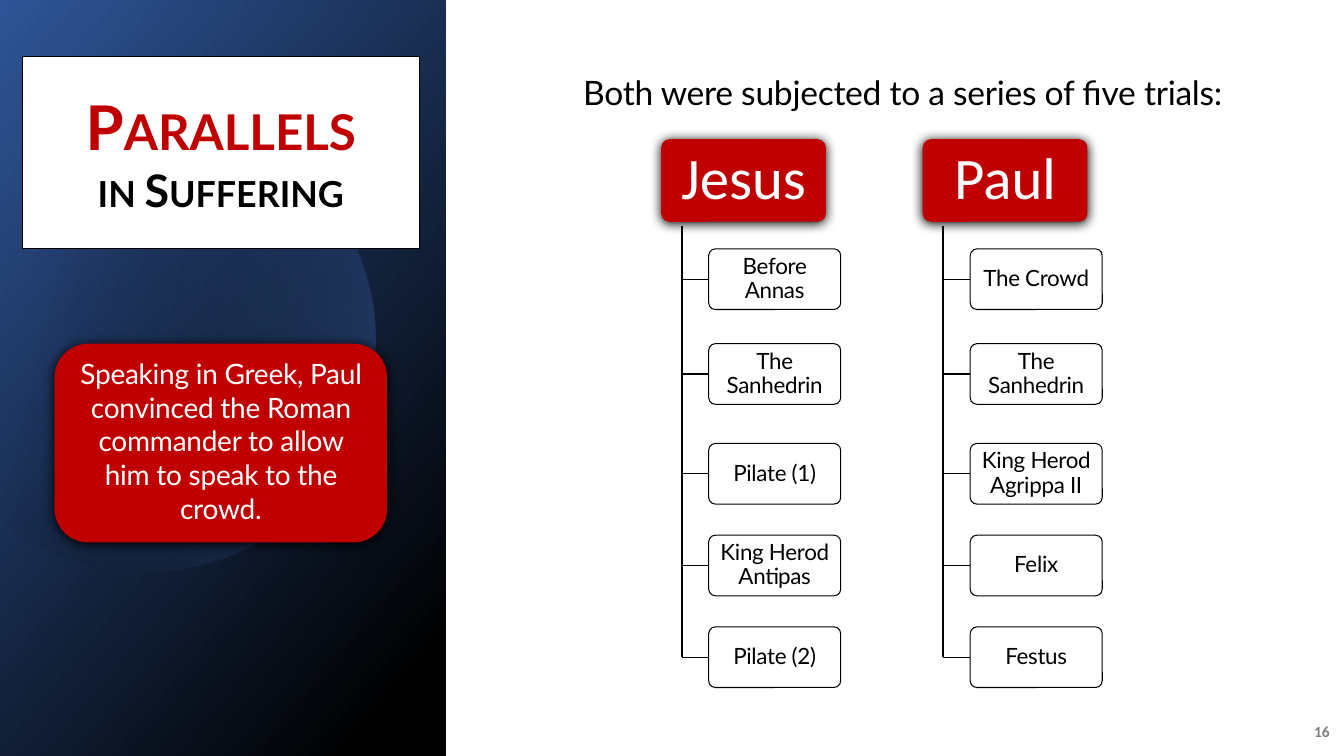
from dataclasses import dataclass
from math import acos, cos, sin, pi
from typing import Optional

from lxml.etree import SubElement
from pptx import Presentation
from pptx.dml.color import RGBColor
from pptx.enum.shapes import MSO_CONNECTOR, MSO_SHAPE
from pptx.enum.text import MSO_ANCHOR, MSO_AUTO_SIZE, PP_ALIGN
from pptx.oxml.ns import qn
from pptx.util import Pt

BLACK = RGBColor(0x00, 0x00, 0x00)
WHITE = RGBColor(0xFF, 0xFF, 0xFF)
RED = RGBColor(0xC0, 0x00, 0x00)
GREY = RGBColor(0x80, 0x80, 0x80)
NAVY = RGBColor(0x2F, 0x55, 0x97)
BLUE = RGBColor(0x44, 0x72, 0xC4)


@dataclass
class Style:
    font: str
    size: float
    color: RGBColor
    bold: bool = False
    align: PP_ALIGN = PP_ALIGN.CENTER
    line_spacing: float = 1.0
    tight: bool = False


@dataclass
class Card:
    fill: RGBColor
    style: Style
    insets: tuple[float, float, float, float]
    corner: float
    outline: Optional[RGBColor] = None
    glow: bool = False


@dataclass
class Column:
    heading: str
    left: float
    trials: list[str]


HEADING = Card(RED, Style("Calibri", 42, WHITE, line_spacing=0.9), (8, 6, 8, 6), 0.1, glow=True)
TRIAL = Card(WHITE, Style("Lato", 16, BLACK, line_spacing=0.9, tight=True),
             (4.5, 3.5, 4.5, 3.5), 0.11, outline=BLACK)
NOTE = Card(RED, Style("Lato", 20, WHITE, tight=True), (7.2, 0, 7.2, 3.6), 0.17, glow=True)

COLUMNS = [
    Column("Jesus", 472.3, ["Before Annas", "The Sanhedrin", "Pilate (1)",
                            "King Herod Antipas", "Pilate (2)"]),
    Column("Paul", 659.1, ["The Crowd", "The Sanhedrin", "King Herod Agrippa II",
                           "Felix", "Festus"]),
]
TRIAL_TOPS = [177.8, 245.5, 316.8, 382.3, 447.8]
TRIAL_WIDTH, TRIAL_HEIGHT = 94.3, 43.3
TRUNK_INDENT, TRIAL_INDENT = 14.6, 33.9


def set_insets(frame, insets: tuple[float, float, float, float]) -> None:
    (frame.margin_left, frame.margin_top,
     frame.margin_right, frame.margin_bottom) = map(Pt, insets)


def write(frame, text: str, style: Style) -> None:
    frame.word_wrap = True
    para = frame.paragraphs[0]
    para.alignment = style.align
    para.line_spacing = style.line_spacing
    span = para.add_run()
    span.text = text
    if style.tight:
        span._r.get_or_add_rPr().set("spc", "-20")
    font = para.font
    font.name, font.size, font.bold = style.font, Pt(style.size), style.bold
    font.color.rgb = style.color


def add_text(page, text: str, style: Style, left: float, top: float,
             width: float, height: float):
    box = page.shapes.add_textbox(Pt(left), Pt(top), Pt(width), Pt(height))
    write(box.text_frame, text, style)
    return box


def add_card(shapes, card: Card, text: str, left: float, top: float,
             width: float, height: float) -> None:
    box = shapes.add_shape(MSO_SHAPE.ROUNDED_RECTANGLE, Pt(left), Pt(top), Pt(width), Pt(height))
    box.adjustments[0] = card.corner
    box.fill.solid()
    box.fill.fore_color.rgb = card.fill
    if card.outline is None:
        box.line.fill.background()
    else:
        box.line.color.rgb = card.outline
        box.line.width = Pt(0.75)
    box.shadow.inherit = False
    if card.glow:
        effects = box._element.spPr.find(qn("a:effectLst"))
        shadow = SubElement(effects, qn("a:outerShdw"), blurRad=str(Pt(8.5)), dist=str(Pt(1)),
                            dir="5400000", algn="ctr", rotWithShape="0")
        SubElement(shadow, qn("a:srgbClr"), val=str(BLACK))
    box.text_frame.vertical_anchor = MSO_ANCHOR.MIDDLE
    set_insets(box.text_frame, card.insets)
    write(box.text_frame, text, card.style)


def add_line(shapes, x1: float, y1: float, x2: float, y2: float, weight: float) -> None:
    line = shapes.add_connector(MSO_CONNECTOR.STRAIGHT, Pt(x1), Pt(y1), Pt(x2), Pt(y2))
    line.line.color.rgb = BLACK
    line.line.width = Pt(weight)
    SubElement(line._element.spPr, qn("a:effectLst"))


def set_gradient(shape, angle: float, stops: list[tuple[float, RGBColor]]) -> None:
    shape.fill.gradient()
    shape.fill.gradient_angle = angle
    for stop, (position, color) in zip(shape.fill.gradient_stops, stops):
        stop.position = position
        stop.color.rgb = color
    shape.line.fill.background()
    shape.shadow.inherit = False


def add_side_panel(page) -> None:
    panel = page.shapes.add_shape(MSO_SHAPE.RECTANGLE, 0, 0, Pt(318.5), Pt(540))
    set_gradient(panel, 140, [(0.08, BLACK), (1, NAVY)])

    center_x, center_y, radius, steps = 104, 244, 164, 90
    reach = acos(-center_x / radius)
    angles = [reach * (2 * step / steps - 1) for step in range(steps + 1)]
    points = [(Pt(center_x + radius * cos(a)), Pt(center_y + radius * sin(a))) for a in angles]
    builder = page.shapes.build_freeform(*points[0])
    builder.add_line_segments(points[1:], close=True)
    disc = builder.convert_to_shape()
    set_gradient(disc, 346, [(0.2, BLACK), (1, BLUE)])
    colors = disc._element.spPr.iter(qn("a:srgbClr"))
    for color, alpha in zip(colors, ("0", "43000")):
        SubElement(color, qn("a:alpha"), val=alpha)


def format_title(page) -> None:
    title = page.shapes.title
    page.shapes._spTree.append(title._element)
    title.left, title.top, title.width, title.height = Pt(16), Pt(40.3), Pt(283.5), Pt(137.5)
    outline = SubElement(title._element.spPr, qn("a:prstGeom"), prst="roundRect")
    SubElement(outline, qn("a:avLst"))
    title.fill.solid()
    title.fill.fore_color.rgb = WHITE
    title.line.color.rgb = BLACK
    title.line.width = Pt(0.75)
    frame = title.text_frame
    frame.word_wrap = True
    frame.auto_size = MSO_AUTO_SIZE.NONE
    frame.vertical_anchor = MSO_ANCHOR.MIDDLE
    set_insets(frame, (0, 0, 0, 0))
    para = frame.paragraphs[0]
    para.alignment = PP_ALIGN.CENTER
    para.space_after = Pt(6)
    for text, size, color in (("Parallels", 44, RED), ("in Suffering", 32, BLACK)):
        if para.runs:
            para.add_line_break()
        span = para.add_run()
        span.text = text
        span.font.name, span.font.size, span.font.bold = "Lato", Pt(size), True
        span.font.color.rgb = color
        span._r.get_or_add_rPr().set("cap", "small")


def add_column(page, column: Column) -> None:
    shapes = page.shapes.add_group_shape().shapes
    add_card(shapes, HEADING, column.heading, column.left, 99.4, 117.6, 59)
    trunk = column.left + TRUNK_INDENT
    trial_left = column.left + TRIAL_INDENT
    add_line(shapes, trunk, 161.3, trunk, TRIAL_TOPS[-1] + TRIAL_HEIGHT / 2, 1.5)
    for trial, top in zip(column.trials, TRIAL_TOPS):
        middle = top + TRIAL_HEIGHT / 2
        add_line(shapes, trial_left, middle, trunk, middle, 1)
        add_card(shapes, TRIAL, trial, trial_left, top, TRIAL_WIDTH, TRIAL_HEIGHT)


def main() -> None:
    deck = Presentation()
    deck.slide_width, deck.slide_height = Pt(960), Pt(540)
    page = deck.slides.add_slide(deck.slide_layouts[5])
    add_side_panel(page)
    format_title(page)
    add_text(page, "Both were subjected to a series of five trials:",
             Style("Lato", 24, BLACK, tight=True), 360, 47.5, 569.5, 36)
    add_card(page.shapes, NOTE, "Speaking in Greek, Paul convinced the Roman commander "
             "to allow him to speak to the crowd.", 39, 245.5, 237.6, 142)
    for column in COLUMNS:
        add_column(page, column)
    number = add_text(page, "16", Style("Calibri", 11, GREY, bold=True, align=PP_ALIGN.RIGHT),
                      921.6, 508.3, 35.3, 28.8)
    number.text_frame.vertical_anchor = MSO_ANCHOR.MIDDLE
    deck.save("out.pptx")


if __name__ == "__main__":
    main()
